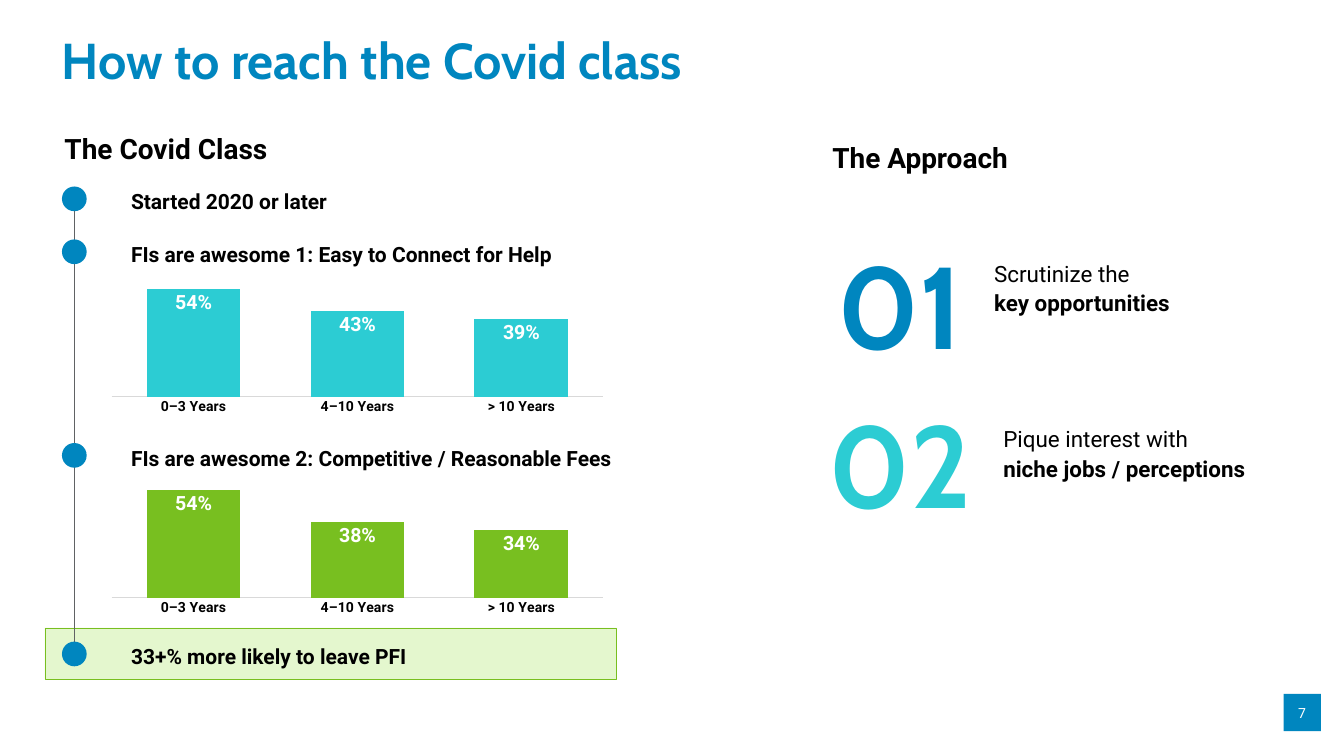
from pptx import Presentation
from pptx import util as u
from pptx.chart.data import CategoryChartData
from pptx.dml.color import RGBColor
from pptx.enum import chart as ch, shapes, text
from pptx.oxml.ns import qn
from lxml import etree

W, H = 26.66, 15
BLUE, TEAL, GREEN, PALE = "0086BF", "2CCCD3", "78BF20", "E4F7CE"
BLACK, WHITE, GREY, RULE = "000000", "FFFFFF", "606264", "D9D9D9"
HEAD, BODY = "Cabin", "Roboto"

# Positions and sizes are percentages of the slide's width and height.
TITLE = ("How to reach the Covid class", (4.58, 5.67, 90.92, 13.2))
HEADINGS = [
    ("The Covid Class", (3.86, 16.93, 16.32, 4.53), False),
    ("The Approach", (60.99, 18.13, 33.46, 4.53), True),
]
CATEGORIES = ["0–3 Years", "4–10 Years", "> 10 Years"]
TIMELINE = [
    ("Started 2020 or later", 24.67, 26.26),
    ("FIs are awesome 1: Easy to Connect for Help", 31.67, 38.11),
    ("FIs are awesome 2: Competitive / Reasonable Fees", 58.6, 38.11),
    ("33+% more likely to leave PFI", 84.87, 26.26),
]
CHARTS = [
    (36.33, TEAL, [0.54, 0.43, 0.39]),
    (62.93, GREEN, [0.54, 0.38, 0.34]),
]
APPROACH = [
    ("01", BLUE, 25.27, "Scrutinize the", "key opportunities", (73.03, 34, 21.46, 7.6)),
    ("02", TEAL, 46.33, "Pique interest with", "niche jobs / perceptions", (73.71, 55.93, 26.2, 7.6)),
]
BANNER = (3.34, 83.07, 42.54, 6.73)
PAGE_TILE = (95.5, 91.8, 2.78, 4.93)
PAGE_NUMBER = ("7", (95.91, 92.8, 1.95, 2.93))
DOT_X, DOT_W, DOT_H = 4.61, 1.84, 3.27


def rgb(color):
    return RGBColor.from_string(color)


def place(x, y, w, h):
    return [u.Inches(W * x / 100), u.Inches(H * y / 100),
            u.Inches(W * w / 100), u.Inches(H * h / 100)]


def set_font(font, size, color, bold=False, name=BODY):
    font.size, font.bold, font.name = u.Pt(size), bold, name
    font.color.rgb = rgb(color)


def add_block(s, kind, box, fill, line=None):
    sp = s.shapes.add_shape(kind, *place(*box))
    sp.shadow.inherit = False
    sp.fill.solid()
    sp.fill.fore_color.rgb = rgb(fill)
    if line:
        sp.line.color.rgb = rgb(line)
        sp.line.width = u.Pt(1)
    else:
        sp.line.fill.background()


def add_text(s, box, runs, size, color=BLACK, name=BODY, spacing=1.1, indent=0,
             align=text.PP_ALIGN.LEFT, anchor=text.MSO_ANCHOR.TOP, wrap=True):
    tf = s.shapes.add_textbox(*place(*box)).text_frame
    tf.word_wrap, tf.vertical_anchor = wrap, anchor
    tf.margin_left = tf.margin_right = tf.margin_top = tf.margin_bottom = 0
    p = tf.paragraphs[0]
    p.alignment, p.line_spacing = align, spacing
    if indent:
        pPr = p._p.get_or_add_pPr()
        pPr.set("marL", str(u.Inches(indent)))
        pPr.set("indent", "0")
    for i, (words, bold) in enumerate(runs):
        if i:
            p.add_line_break()
        r = p.add_run()
        r.text = words
        set_font(r.font, size, color, bold, name)


def add_columns(s, y, color, values):
    data = CategoryChartData(number_format="0%")
    data.categories = CATEGORIES
    data.add_series("Series 1", values)
    chart = s.shapes.add_chart(ch.XL_CHART_TYPE.COLUMN_CLUSTERED,
                               *place(7.54, y, 38.11, 19), data).chart
    chart.has_legend = chart.has_title = False
    set_font(chart.font, 20, BLACK, True)
    axis = chart.category_axis
    axis.major_tick_mark = ch.XL_TICK_MARK.NONE
    axis.format.line.color.rgb = rgb(RULE)
    axis.format.line.width = u.Pt(0.75)
    set_font(axis.tick_labels.font, 20, BLACK, True)
    scale = chart.value_axis
    scale.visible = scale.has_major_gridlines = False
    scale.minimum_scale, scale.maximum_scale = 0, 0.6
    plot = chart.plots[0]
    plot.gap_width, plot.overlap, plot.vary_by_categories = 75, 40, False
    fill = plot.series[0].format.fill
    fill.solid()
    fill.fore_color.rgb = rgb(color)
    plot.has_data_labels = True
    labels = plot.data_labels
    labels.show_value = True
    labels.position = ch.XL_LABEL_POSITION.INSIDE_END
    labels.number_format, labels.number_format_is_linked = "0%", False
    set_font(labels.font, 28, WHITE, True)


def add_timeline(s):
    x = u.Inches(W * (DOT_X + DOT_W / 2) / 100)
    top, bottom = (u.Inches(H * (TIMELINE[i][1] + DOT_H) / 100) for i in (0, -1))
    line = s.shapes.add_connector(shapes.MSO_CONNECTOR.STRAIGHT, x, top, x, bottom)
    line.line.color.rgb = rgb(GREY)
    line.line.width = u.Pt(2.25)
    etree.SubElement(line._element.spPr, qn("a:effectLst"))
    for words, y, width in TIMELINE:
        add_block(s, shapes.MSO_SHAPE.OVAL, (DOT_X, y, DOT_W, DOT_H), BLUE)
        add_text(s, (9.75, y - 0.07, width, 3.4), [(words, True)], 30)


def main():
    prs = Presentation()
    prs.slide_width, prs.slide_height = u.Inches(W), u.Inches(H)
    s = prs.slides.add_slide(prs.slide_layouts[6])
    center = text.PP_ALIGN.CENTER

    add_block(s, shapes.MSO_SHAPE.RECTANGLE, PAGE_TILE, BLUE)
    number, box = PAGE_NUMBER
    add_text(s, box, [(number, False)], 20, WHITE, spacing=1, align=center,
             anchor=text.MSO_ANCHOR.MIDDLE, wrap=False)
    add_block(s, shapes.MSO_SHAPE.RECTANGLE, BANNER, PALE, GREEN)

    words, box = TITLE
    add_text(s, box, [(words, True)], 72, BLUE, HEAD, 0.75)
    for words, box, wrap in HEADINGS:
        add_text(s, box, [(words, True)], 40, indent=0.25, wrap=wrap)

    for number, color, y, lead, key, box in APPROACH:
        add_text(s, (58.85, y, 16.24, 21.73), [(number, True)], 166, color, HEAD, 1.3,
                 align=center)
        add_text(s, box, [(lead, False), (key, True)], 32, indent=0.25)

    add_timeline(s)
    for y, color, values in CHARTS:
        add_columns(s, y, color, values)
    prs.save("out.pptx")


if __name__ == "__main__":
    main()
